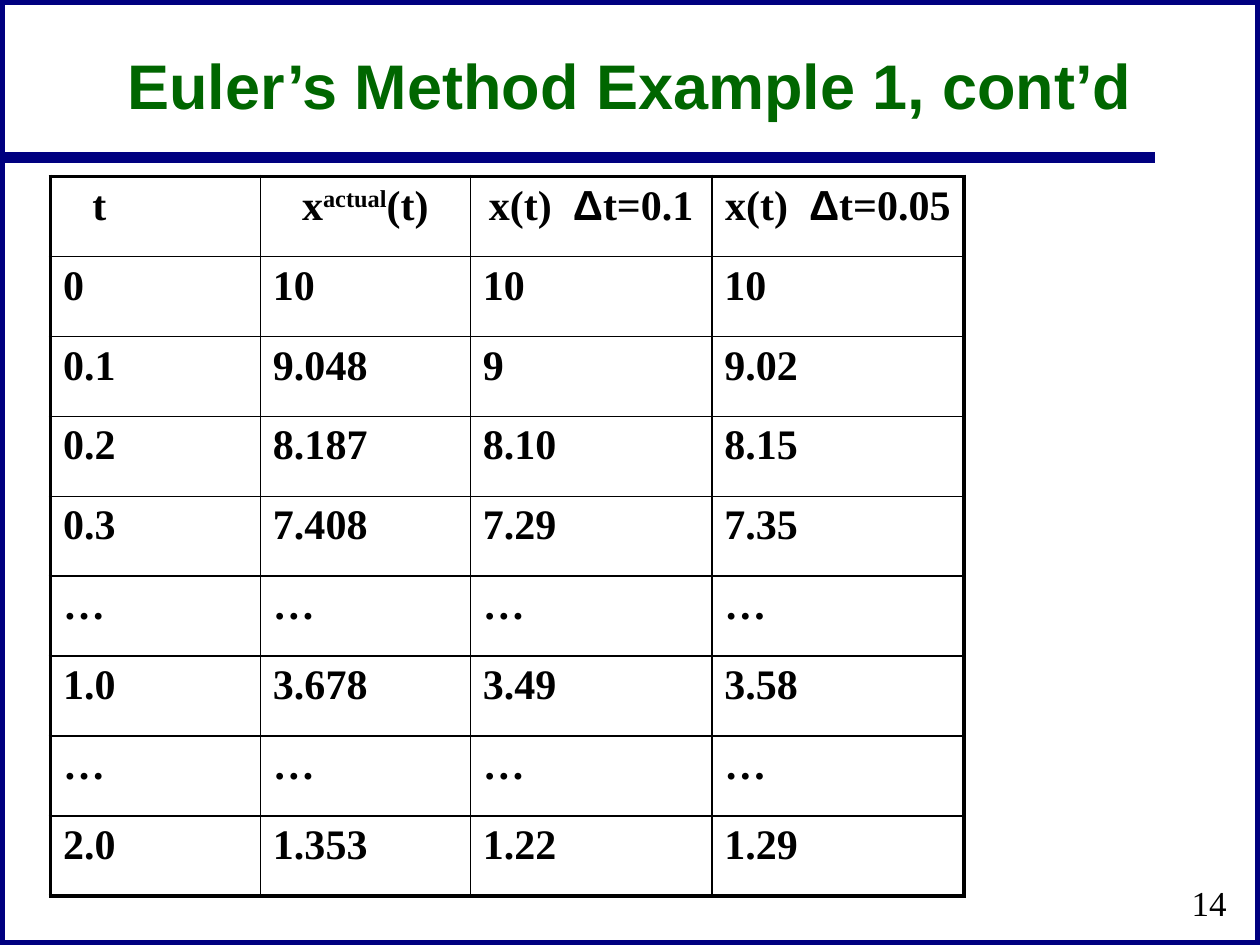
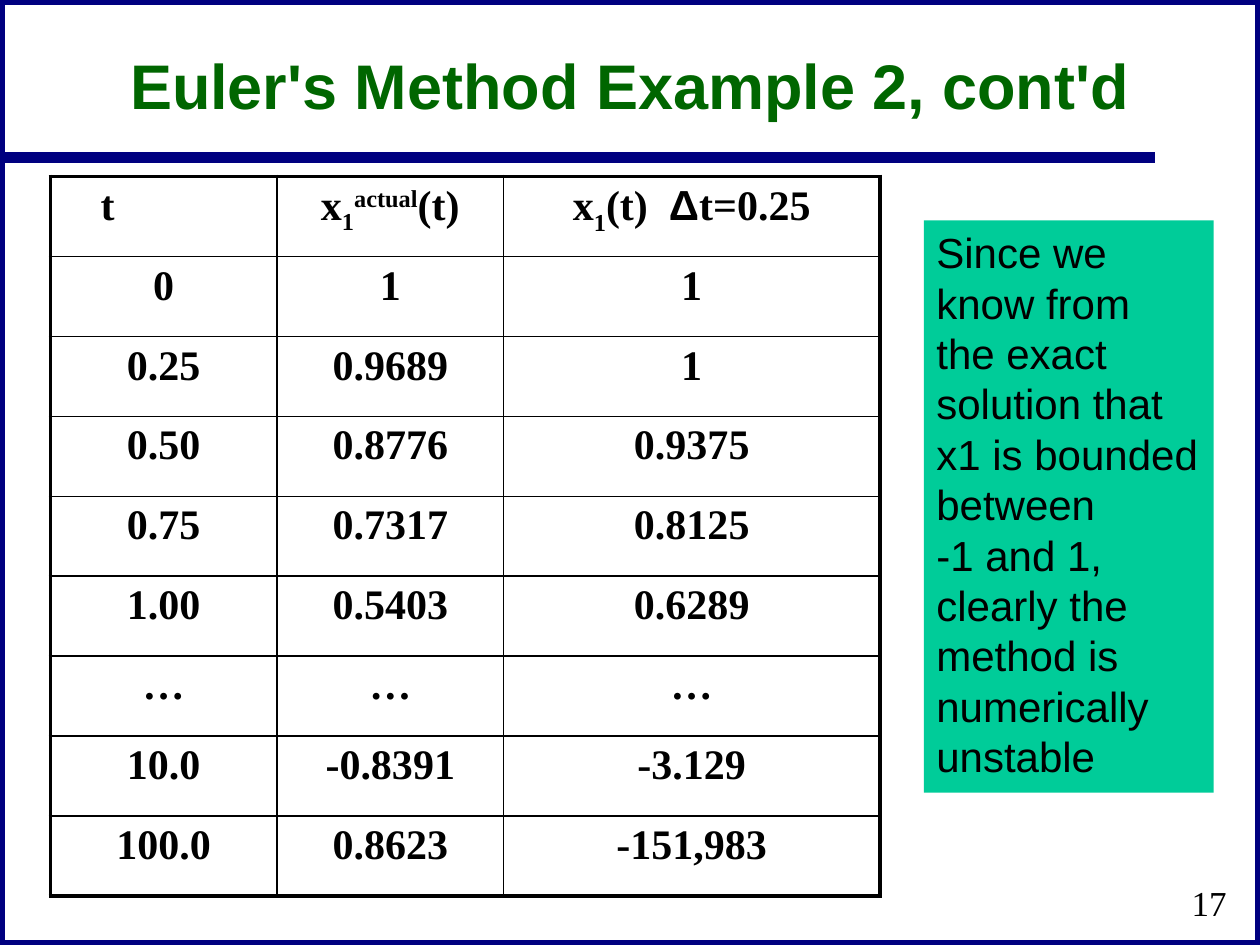
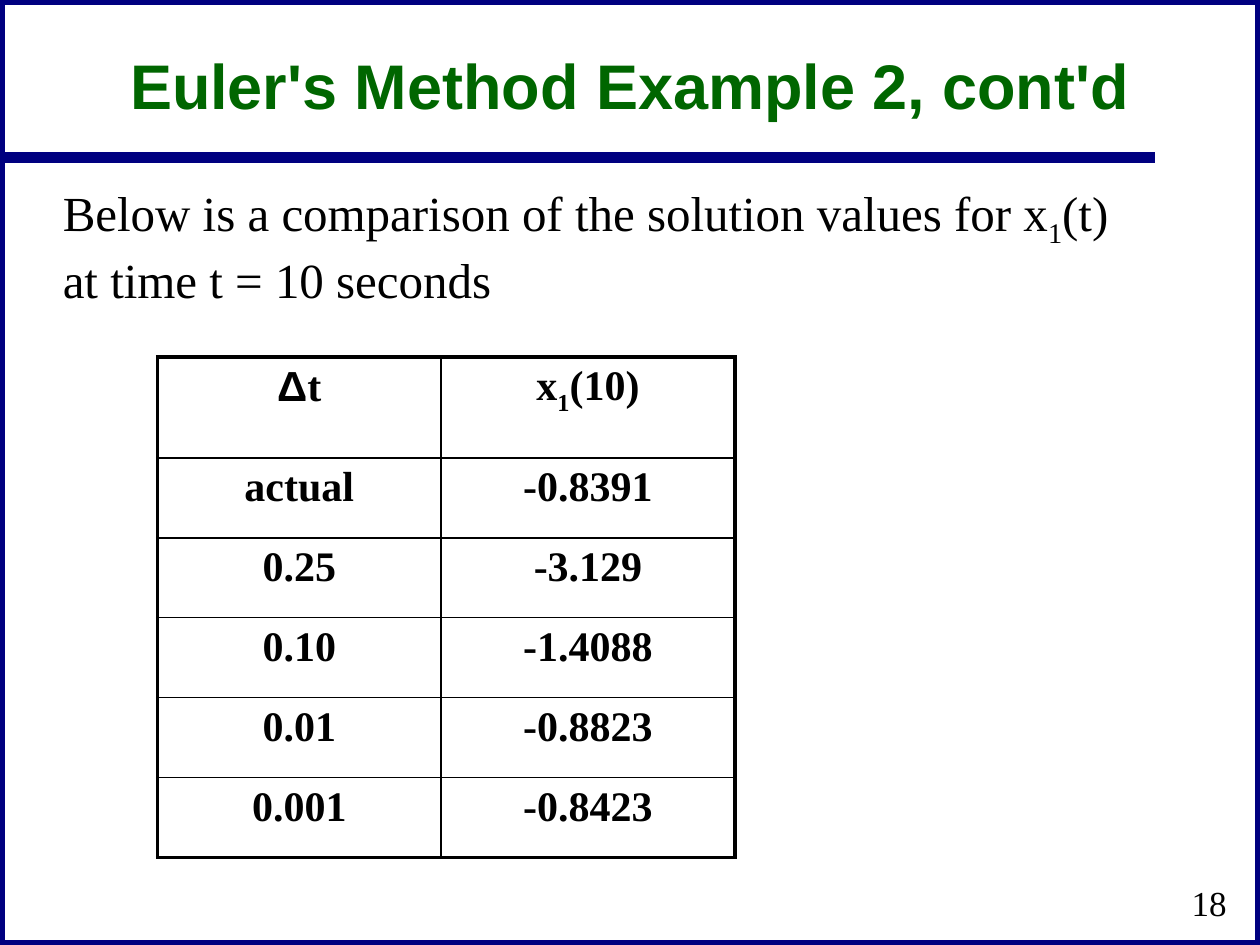
"""Build three slides of tables on Euler's method."""
from lxml.etree import SubElement
from pptx import Presentation
from pptx.dml.color import RGBColor
from pptx.enum.shapes import MSO_CONNECTOR as Connector, MSO_SHAPE as Shape
from pptx.enum.text import MSO_ANCHOR as Anchor, PP_ALIGN as Align
from pptx.oxml.ns import qn
from pptx.util import Pt

NAVY = RGBColor(0x00, 0x00, 0x80)
GREEN = RGBColor(0x00, 0x66, 0x00)
MINT = RGBColor(0x00, 0xCC, 0x99)
BLACK = RGBColor(0x00, 0x00, 0x00)
SANS, SERIF = "Arial", "Times New Roman"
SUPER, SUB = 30000, -25000
WIDTH, HEIGHT = 720, 540
LEFT, TOP = 28.8, 100.8
ROW_HEIGHT = 45.7
TAB_STOP = 72
THICK, THIN = 2.25, 1

X1 = [("x", 0), ("1", SUB)]
ELLIPSIS = "…"

SLIDES = [
    {
        "title": "Euler’s Method Example 1, cont’d",
        "number": "14",
        "table": {
            "at": (LEFT, TOP),
            "columns": [120, 120, 138, 144],
            "header_height": ROW_HEIGHT,
            "align": Align.LEFT,
            "header": [
                [("t\t", 0)],
                [("x", 0), ("actual", SUPER), ("(t)", 0)],
                [("x(t)  ", 0), ("Δ", 0), ("t=0.1", 0)],
                [("x(t)  ", 0), ("Δ", 0), ("t=0.05", 0)],
            ],
            "rows": [
                ["0", "10", "10", "10"],
                ["0.1", "9.048", "9", "9.02"],
                ["0.2", "8.187", "8.10", "8.15"],
                ["0.3", "7.408", "7.29", "7.35"],
                [ELLIPSIS] * 4,
                ["1.0", "3.678", "3.49", "3.58"],
                [ELLIPSIS] * 4,
                ["2.0", "1.353", "1.22", "1.29"],
            ],
        },
    },
    {
        "title": "Euler's Method Example 2, cont'd",
        "number": "17",
        "table": {
            "at": (LEFT, TOP),
            "columns": [129.5, 129.5, 215],
            "header_height": ROW_HEIGHT,
            "align": Align.CENTER,
            "header": [
                [("t\t", 0)],
                X1 + [("actual", SUPER), ("(t)", 0)],
                X1 + [("(t)  ", 0), ("Δ", 0), ("t=0.25", 0)],
            ],
            "rows": [
                ["0", "1", "1"],
                ["0.25", "0.9689", "1"],
                ["0.50", "0.8776", "0.9375"],
                ["0.75", "0.7317", "0.8125"],
                ["1.00", "0.5403", "0.6289"],
                [ELLIPSIS] * 3,
                ["10.0", "-0.8391", "-3.129"],
                ["100.0", "0.8623", "-151,983"],
            ],
        },
        "note": [
            "Since we", "know from", "the exact", "solution that",
            "x1 is bounded", "between", "-1 and 1,", "clearly the",
            "method is", "numerically", "unstable",
        ],
    },
    {
        "title": "Euler's Method Example 2, cont'd",
        "number": "18",
        "table": {
            "at": (90, 204),
            "columns": [162, 168],
            "header_height": 57.6,
            "align": Align.CENTER,
            "header": [[("Δ", 0), ("t", 0)], X1 + [("(10)", 0)]],
            "rows": [
                ["actual", "-0.8391"],
                ["0.25", "-3.129"],
                ["0.10", "-1.4088"],
                ["0.01", "-0.8823"],
                ["0.001", "-0.8423"],
            ],
        },
        "intro": [
            [("Below is a comparison of the solution values for x", 0),
             ("1", SUB), ("(t)", 0)],
            [("at time t = 10 seconds", 0)],
        ],
    },
]


def add_span(para, text, size, font=SERIF, color=BLACK, bold=False, baseline=0):
    span = para.add_run()
    span.text = text
    span.font.size = Pt(size)
    span.font.name = font
    span.font.bold = bold
    span.font.color.rgb = color
    if baseline:
        span._r.get_or_add_rPr().set("baseline", str(baseline))


def add_box(page, left, top, width, height, anchor=Anchor.TOP):
    box = page.shapes.add_textbox(Pt(left), Pt(top), Pt(width), Pt(height))
    box.text_frame.word_wrap = True
    box.text_frame.vertical_anchor = anchor
    return box.text_frame


def add_frame(page, title, number):
    border = page.shapes.add_shape(Shape.RECTANGLE, 0, 0, Pt(WIDTH), Pt(HEIGHT))
    border.shadow.inherit = False
    border.fill.background()
    rule = page.shapes.add_connector(Connector.STRAIGHT, 0, Pt(90), Pt(660), Pt(90))
    SubElement(rule._element.spPr, qn("a:effectLst"))
    for outline in (border.line, rule.line):
        outline.color.rgb = NAVY
        outline.width = Pt(6)

    heading = add_box(page, 54, 18, 612, 60, Anchor.MIDDLE).paragraphs[0]
    heading.alignment = Align.CENTER
    add_span(heading, title, 36, SANS, GREEN, bold=True)

    footer = add_box(page, 558, 498, 150, 36, Anchor.MIDDLE).paragraphs[0]
    footer.alignment = Align.RIGHT
    add_span(footer, number, 20)


def set_borders(cell, thick_sides):
    properties = cell._tc.get_or_add_tcPr()
    for side in "LRTB":
        width = Pt(THICK if side in thick_sides else THIN)
        line = SubElement(properties, qn(f"a:ln{side}"), w=str(width))
        fill = SubElement(line, qn("a:solidFill"))
        SubElement(fill, qn("a:srgbClr"), val=str(BLACK))
    cell.fill.background()


def add_tab_stop(para):
    stops = SubElement(para._p.get_or_add_pPr(), qn("a:tabLst"))
    SubElement(stops, qn("a:tab"), pos=str(Pt(TAB_STOP)), algn="l")


def add_values(page, at, columns, header_height, align, header, rows):
    grid = [header] + [[[(value, 0)] for value in row] for row in rows]
    heights = [header_height] + [ROW_HEIGHT] * len(rows)
    table = page.shapes.add_table(
        len(grid), len(columns), Pt(at[0]), Pt(at[1]),
        Pt(sum(columns)), Pt(sum(heights))).table
    table.first_row = table.horz_banding = False
    for column, width in zip(table.columns, columns):
        column.width = Pt(width)
    for r, (cells, height) in enumerate(zip(grid, heights)):
        table.rows[r].height = Pt(height)
        for c, spans in enumerate(cells):
            cell = table.cell(r, c)
            edges = {"L": c == 0, "R": c == len(columns) - 1,
                     "T": r == 0, "B": r == len(rows)}
            set_borders(cell, [side for side in edges if edges[side]])
            para = cell.text_frame.paragraphs[0]
            para.alignment = align if r else Align.CENTER
            if "\t" in spans[0][0]:
                add_tab_stop(para)
            for text, baseline in spans:
                font = SANS if text == "Δ" else SERIF
                add_span(para, text, 24, font, bold=True, baseline=baseline)


def add_note(page, lines):
    note = page.shapes.add_shape(
        Shape.RECTANGLE, Pt(528), Pt(126), Pt(165.6), Pt(327))
    note.shadow.inherit = False
    note.fill.solid()
    note.fill.fore_color.rgb = MINT
    note.line.fill.background()
    note.text_frame.word_wrap = False
    note.text_frame.vertical_anchor = Anchor.TOP
    para = note.text_frame.paragraphs[0]
    para.alignment = Align.LEFT
    for i, line in enumerate(lines):
        if i:
            para.add_line_break()
        add_span(para, line, 24, SANS)


def add_intro(page, lines):
    frame = add_box(page, LEFT, TOP, 613.4, 74.2)
    for i, spans in enumerate(lines):
        para = frame.add_paragraph() if i else frame.paragraphs[0]
        for text, baseline in spans:
            add_span(para, text, 28, baseline=baseline)


def main():
    deck = Presentation()
    deck.slide_width, deck.slide_height = Pt(WIDTH), Pt(HEIGHT)
    for content in SLIDES:
        page = deck.slides.add_slide(deck.slide_layouts[6])
        add_frame(page, content["title"], content["number"])
        add_values(page, **content["table"])
        if "note" in content:
            add_note(page, content["note"])
        if "intro" in content:
            add_intro(page, content["intro"])
    deck.save("out.pptx")


if __name__ == "__main__":
    main()
